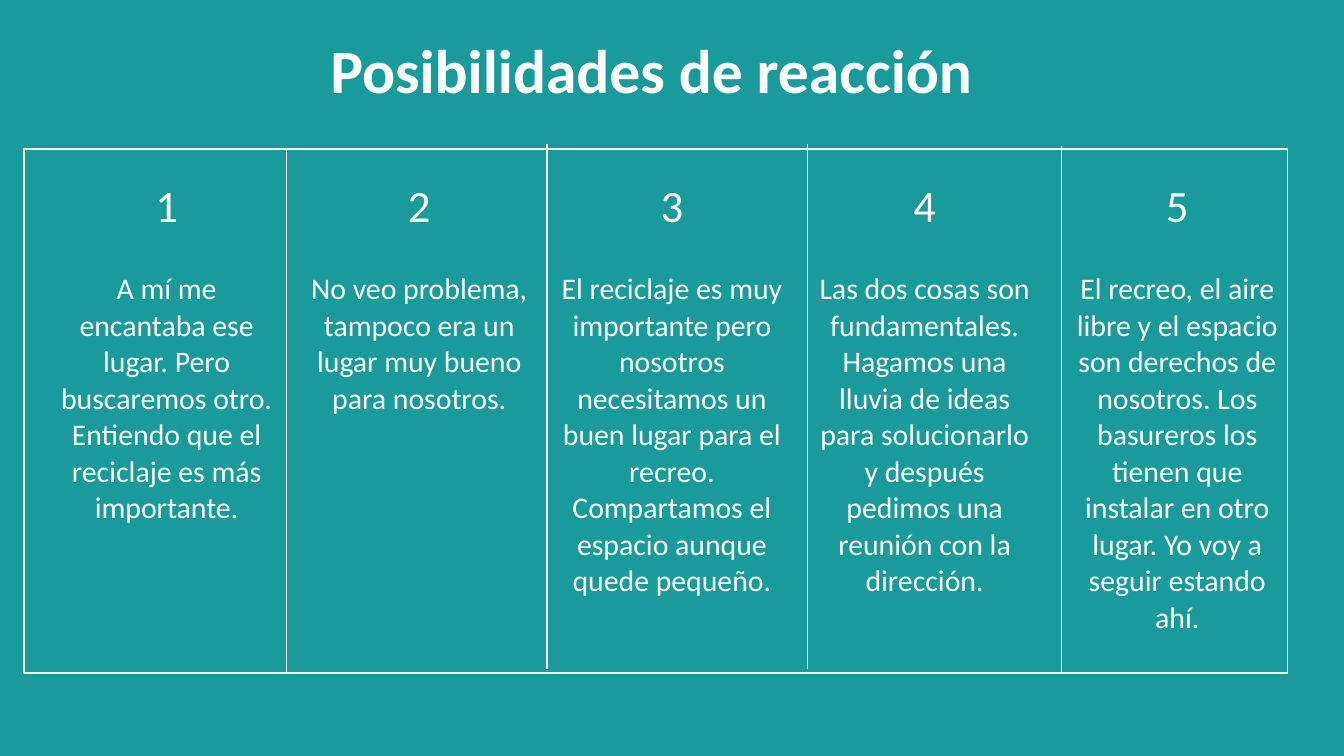
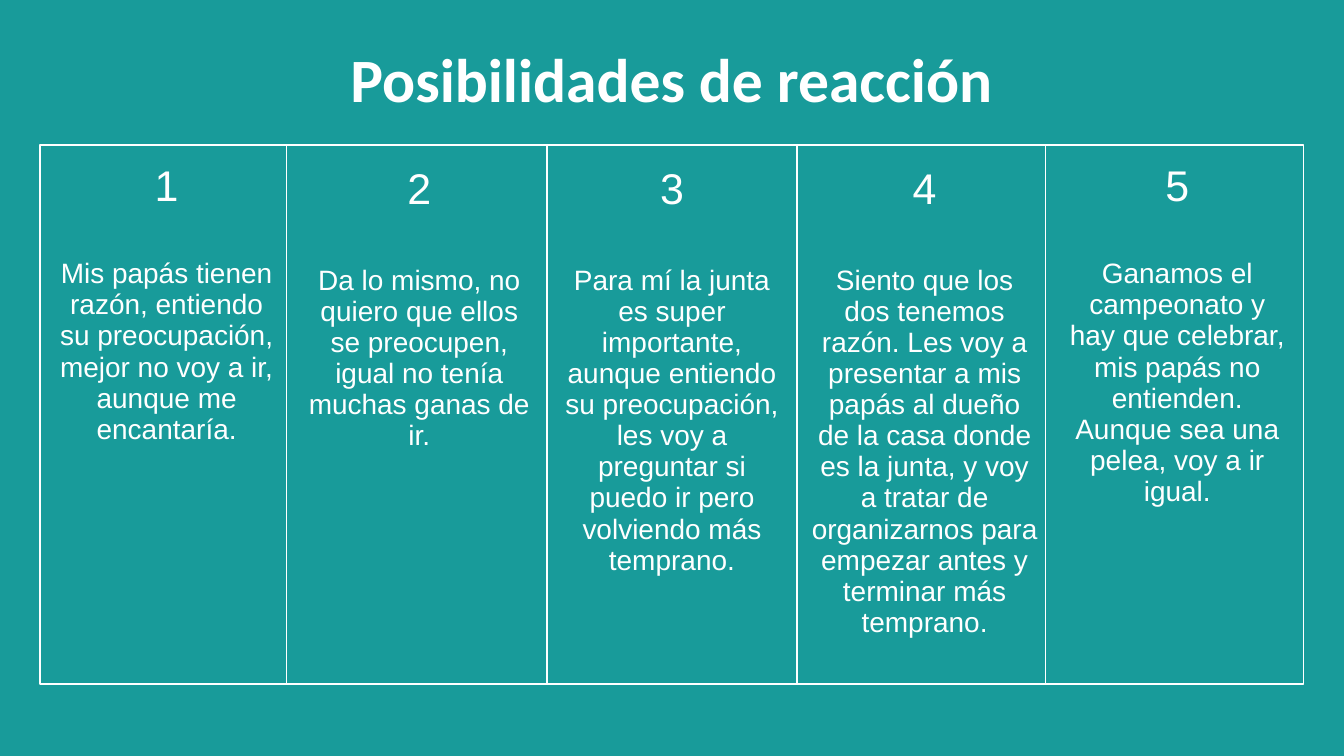
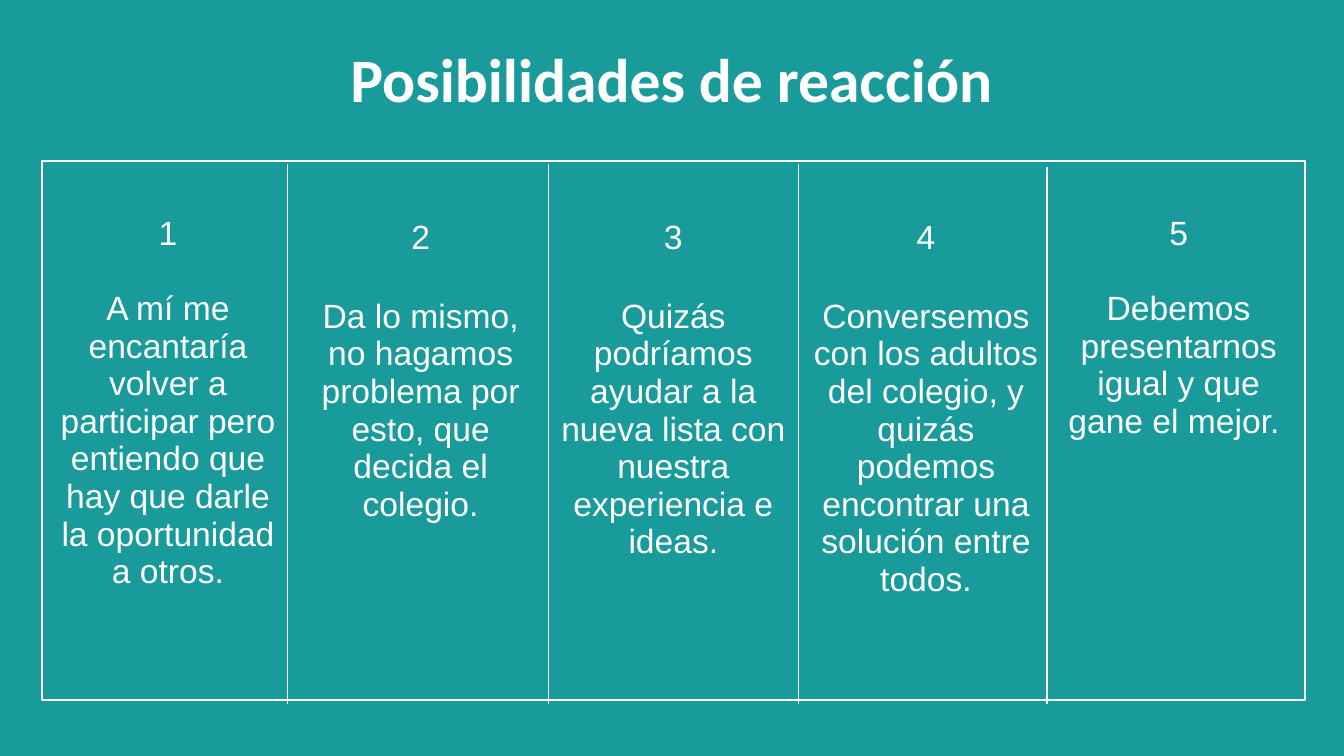
from dataclasses import dataclass
from typing import NamedTuple

from lxml.etree import SubElement
from pptx import Presentation
from pptx.dml.color import RGBColor
from pptx.enum.shapes import MSO_CONNECTOR as CONN, MSO_SHAPE as SHAPE
from pptx.enum.text import PP_ALIGN as ALIGN
from pptx.oxml import parse_xml
from pptx.oxml.ns import nsdecls, qn
from pptx.util import Inches, Pt

# Shared look
TEAL = "189B9A"
WHITE = "FFFFFF"
TITLE = "Posibilidades de reacción"
TITLE_FONT = "Calibri"
WIDTH = 10
HEIGHT = WIDTH * 9 / 16
COL_W = 1.88
FRAME_W = 9.4
PAD = 0.1


class Box(NamedTuple):
    left: float
    top: float
    width: float
    height: float


class Divider(NamedTuple):
    x: float
    top: float
    bottom: float


class Spacing(NamedTuple):
    top: float  # cell margin above the number, inches
    gap: float  # space between number and answer, points


@dataclass
class ReactionSlide:
    title_at: tuple[float, float]
    table: Box
    frame: Box
    dividers: list[Divider]
    font: str
    number_size: float
    answer_size: float
    outer: Spacing  # first and last columns
    inner: Spacing  # columns between them
    answers: list[str]


SLIDES = [
    ReactionSlide(
        title_at=(2.36, 0.2),
        table=Box(0.3, 0.97, FRAME_W, 4.01),
        frame=Box(0.18, 1.11, FRAME_W, 3.9),
        dividers=[Divider(2.13, 1.1, 5.01), Divider(4.07, 1.07, 4.98),
                  Divider(6.01, 1.07, 4.98), Divider(7.9, 1.09, 5)],
        font="Calibri", number_size=24, answer_size=16,
        outer=Spacing(0.37, 19.5), inner=Spacing(0.37, 19.5),
        answers=[
            "A mí me encantaba ese lugar. Pero buscaremos otro. Entiendo que el "
            "reciclaje es más importante.",
            "No veo problema, tampoco era un lugar muy bueno para nosotros.",
            "El reciclaje es muy importante pero nosotros necesitamos un buen lugar "
            "para el recreo. Compartamos el espacio aunque quede pequeño.",
            "Las dos cosas son fundamentales. Hagamos una lluvia de ideas para "
            "solucionarlo y después pedimos una reunión con la dirección.",
            "El recreo, el aire libre y el espacio son derechos de nosotros. Los "
            "basureros los tienen que instalar en otro lugar. Yo voy a seguir "
            "estando ahí.",
        ],
    ),
    ReactionSlide(
        title_at=(2.51, 0.27),
        table=Box(0.3, 0.87, FRAME_W, 3.99),
        frame=Box(0.3, 1.08, FRAME_W, 4.01),
        dividers=[*(Divider(x, 1.07, 5.09) for x in (2.13, 4.07, 5.93)),
                  Divider(7.78, 1.09, 5.09)],
        font="Arial", number_size=23, answer_size=15,
        outer=Spacing(0.34, 25.5), inner=Spacing(0.36, 27.5),
        answers=[
            "Mis papás tienen razón, entiendo su preocupación, mejor no voy a ir, "
            "aunque me encantaría.",
            "Da lo mismo, no quiero que ellos se preocupen, igual no tenía muchas "
            "ganas de ir.",
            "Para mí la junta es super importante, aunque entiendo su preocupación, "
            "les voy a preguntar si puedo ir pero volviendo más temprano.",
            "Siento que los dos tenemos razón. Les voy a presentar a mis papás al "
            "dueño de la casa donde es la junta, y voy a tratar de organizarnos para "
            "empezar antes y terminar más temprano.",
            "Ganamos el campeonato y hay que celebrar, mis papás no entienden. "
            "Aunque sea una pelea, voy a ir igual.",
        ],
    ),
    ReactionSlide(
        title_at=(2.51, 0.27),
        table=Box(0.31, 1.22, FRAME_W, 4.21),
        frame=Box(0.31, 1.2, FRAME_W, 4.01),
        dividers=[*(Divider(x, 1.22, 5.24) for x in (2.14, 4.08, 5.94)),
                  Divider(7.79, 1.24, 5.24)],
        font="Arial", number_size=18, answer_size=18,
        outer=Spacing(0.38, 20), inner=Spacing(0.41, 22),
        answers=[
            "A mí me encantaría volver a participar pero entiendo que hay que darle "
            "la oportunidad a otros.",
            "Da lo mismo, no hagamos problema por esto, que decida el colegio.",
            "Quizás podríamos ayudar a la nueva lista con nuestra experiencia e ideas.",
            "Conversemos con los adultos del colegio, y quizás podemos encontrar una "
            "solución entre todos.",
            "Debemos presentarnos igual y que gane el mejor. ",
        ],
    ),
]


def rgb(color: str) -> RGBColor:
    return RGBColor.from_string(color)


def style_paragraph(p, text: str, font: str, size: float, bold: bool = False) -> None:
    p.text = text
    p.font.name = font
    p.font.size = Pt(size)
    p.font.bold = bold
    p.font.color.rgb = rgb(WHITE)


def add_rect(s, box: Box, fill: str | None = None, line: str | None = None) -> None:
    sp = s.shapes.add_shape(SHAPE.RECTANGLE, *map(Inches, box))
    sp.shadow.inherit = False
    if fill:
        sp.fill.solid()
        sp.fill.fore_color.rgb = rgb(fill)
    else:
        sp.fill.background()
    if line:
        sp.line.color.rgb = rgb(line)
        sp.line.width = Pt(1)
    else:
        sp.line.fill.background()


def add_divider(s, d: Divider) -> None:
    line = s.shapes.add_connector(
        CONN.STRAIGHT, Inches(d.x), Inches(d.top), Inches(d.x), Inches(d.bottom))
    line.line.color.rgb = rgb(WHITE)
    line.line.width = Pt(0.75)
    SubElement(line._element.spPr, qn("a:effectLst"))


def add_title(s, left: float, top: float) -> None:
    tf = s.shapes.add_textbox(*map(Inches, (left, top, 5.27, 0.57))).text_frame
    tf.word_wrap = True
    tf.margin_left = tf.margin_right = tf.margin_top = tf.margin_bottom = Inches(PAD)
    p = tf.paragraphs[0]
    style_paragraph(p, TITLE, TITLE_FONT, 33, bold=True)
    p.line_spacing = 0.9


def clear_cell(cell) -> None:
    """Remove the fill and borders that the table style gives."""
    cell.fill.background()
    tc_pr = cell._tc.get_or_add_tcPr()
    for i, side in enumerate("LRTB"):
        tc_pr.insert(i, parse_xml(f'<a:ln{side} {nsdecls("a")}><a:noFill/></a:ln{side}>'))


def add_answers(s, data: ReactionSlide) -> None:
    count = len(data.answers)
    table = s.shapes.add_table(1, count, *map(Inches, data.table)).table
    table.first_row = table.horz_banding = False
    for i, answer in enumerate(data.answers):
        table.columns[i].width = Inches(COL_W)
        cell = table.cell(0, i)
        clear_cell(cell)
        spacing = data.outer if i in (0, count - 1) else data.inner
        cell.margin_left = cell.margin_right = cell.margin_bottom = Inches(PAD)
        cell.margin_top = Inches(spacing.top)
        number = cell.text_frame.paragraphs[0]
        style_paragraph(number, str(i + 1), data.font, data.number_size)
        body = cell.text_frame.add_paragraph()
        style_paragraph(body, answer, data.font, data.answer_size)
        body.space_before = Pt(spacing.gap)
        number.alignment = body.alignment = ALIGN.CENTER


def build_slide(prs, data: ReactionSlide) -> None:
    s = prs.slides.add_slide(prs.slide_layouts[6])
    # Background and title
    add_rect(s, Box(0, 0, WIDTH, HEIGHT), fill=TEAL)
    add_title(s, *data.title_at)
    # Answers, with their frame and column lines
    add_answers(s, data)
    add_rect(s, data.frame, line=WHITE)
    for d in data.dividers:
        add_divider(s, d)


def main() -> None:
    prs = Presentation()
    prs.slide_width, prs.slide_height = Inches(WIDTH), Inches(HEIGHT)
    for data in SLIDES:
        build_slide(prs, data)
    prs.save("out.pptx")


if __name__ == "__main__":
    main()
